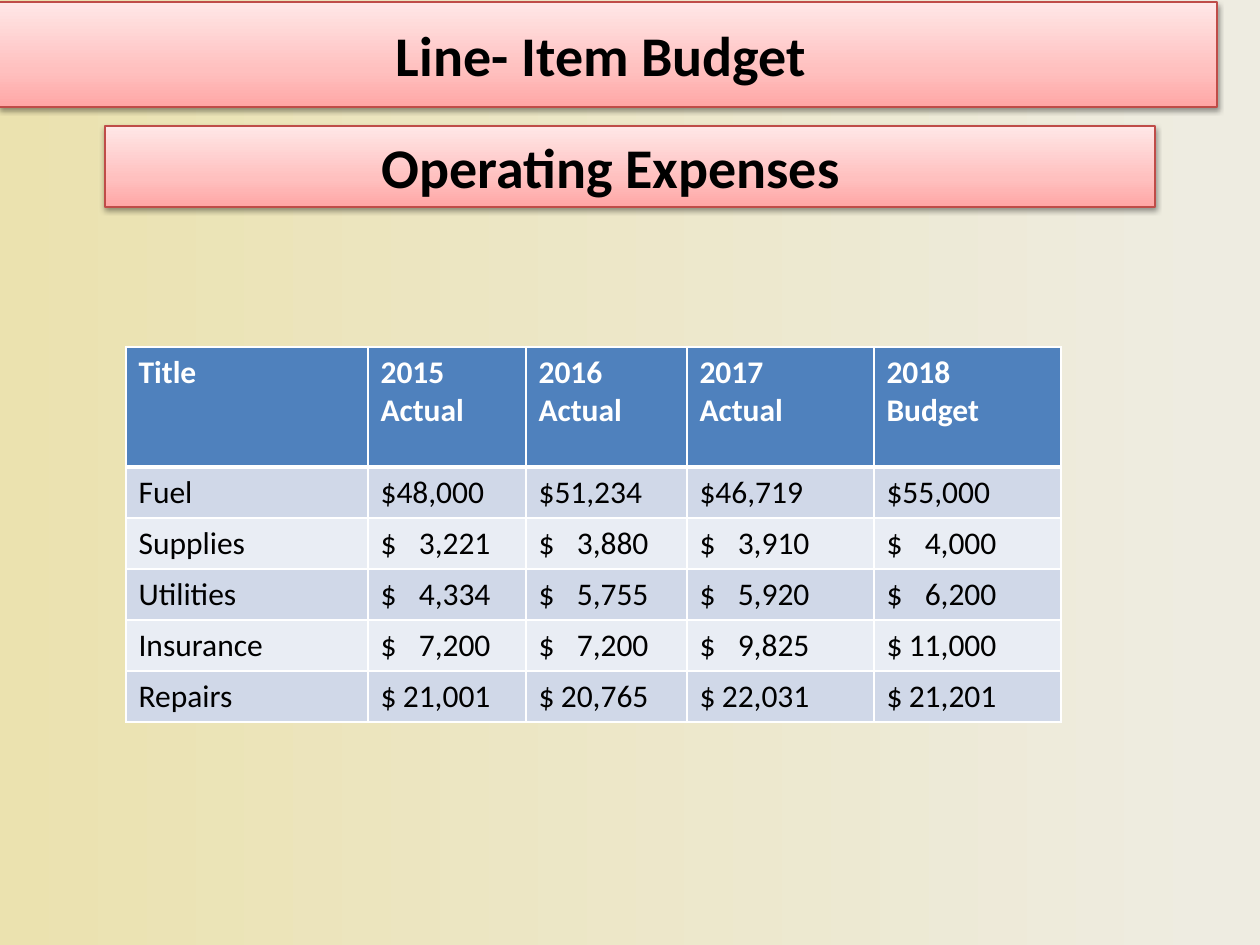
from lxml.etree import SubElement
from pptx import Presentation
from pptx.dml.color import RGBColor
from pptx.enum.shapes import MSO_SHAPE
from pptx.enum.text import MSO_ANCHOR, MSO_AUTO_SIZE, PP_ALIGN
from pptx.oxml.ns import qn
from pptx.util import Emu, Pt

EMU_PER_PX = 914400 / 126
BAR_STOPS = [(0, "FFA6A5"), (35, "FFC0BF"), (100, "FFE7E7")]
BACKGROUND_STOPS = [(0, "EBE2AF"), (97, "EEECE1")]
COLUMN_WIDTHS = [242, 158, 161, 187, 187]
HEADER_HEIGHT, ROW_HEIGHT = 120, 51
AMOUNT_TAB = 110
BUDGET = [
    ["Title", "2015 Actual", "2016 Actual", "2017\nActual", "2018 Budget"],
    ["Fuel", "$48,000", "$51,234", "$46,719", "$55,000"],
    ["Supplies", "$\t3,221", "$\t3,880", "$\t3,910", "$\t4,000"],
    ["Utilities", "$\t4,334", "$\t5,755", "$\t5,920", "$\t6,200"],
    ["Insurance", "$\t7,200", "$\t7,200", "$\t9,825", "$\t11,000"],
    ["Repairs", "$\t21,001", "$\t20,765", "$\t22,031", "$\t21,201"],
]


def px(length):
    return Emu(round(length * EMU_PER_PX))


def color(hex_code):
    return RGBColor.from_string(hex_code)


def set_font(paragraph, size, hex_code, bold):
    font = paragraph.font
    font.name = "Calibri"
    font.size = Pt(size)
    font.bold = bold
    font.color.rgb = color(hex_code)


def set_gradient(fill, owner, stops, angle):
    fill.gradient()
    fill.gradient_angle = angle
    stop_list = next(owner.iter(qn("a:gsLst")))
    for stop in list(stop_list):
        stop_list.remove(stop)
    for position, hex_code in stops:
        stop = SubElement(stop_list, qn("a:gs"), pos=str(position * 1000))
        SubElement(stop, qn("a:srgbClr"), val=hex_code)


def add_shadow(shape):
    shape.shadow.inherit = False
    effects = next(shape.element.iter(qn("a:effectLst")))
    shadow = SubElement(effects, qn("a:outerShdw"), blurRad="40000",
                        dist="20000", dir="5400000", rotWithShape="0")
    black = SubElement(shadow, qn("a:srgbClr"), val="000000")
    SubElement(black, qn("a:alpha"), val="38000")


def format_heading(bar, box, text, right_inset):
    bar.left, bar.top, bar.width, bar.height = map(px, box)
    set_gradient(bar.fill, bar.element, BAR_STOPS, 90)
    bar.line.color.rgb = color("BF4C48")
    bar.line.width = Pt(0.75)
    add_shadow(bar)
    frame = bar.text_frame
    frame.text = text
    frame.word_wrap = True
    frame.auto_size = MSO_AUTO_SIZE.SHAPE_TO_FIT_TEXT
    frame.vertical_anchor = MSO_ANCHOR.MIDDLE
    frame.margin_right = px(right_inset)
    heading = frame.paragraphs[0]
    heading.alignment = PP_ALIGN.CENTER
    set_font(heading, 32, "000000", True)


def set_borders(cell, top, bottom):
    properties = cell._tc.get_or_add_tcPr()
    for side, width in (("L", 1), ("R", 1), ("T", top), ("B", bottom)):
        border = SubElement(properties, qn(f"a:ln{side}"), w=str(Pt(width)))
        solid = SubElement(border, qn("a:solidFill"))
        SubElement(solid, qn("a:srgbClr"), val="FFFFFF")


def add_amount_tab(paragraph):
    tabs = SubElement(paragraph._p.get_or_add_pPr(), qn("a:tabLst"))
    SubElement(tabs, qn("a:tab"), pos=str(px(AMOUNT_TAB)), algn="r")


def fill_cell(cell, text, row):
    is_header = row == 0
    set_borders(cell, 3 if row == 1 else 1, 3 if is_header else 1)
    cell.fill.solid()
    band = "D0D8E8" if row % 2 else "E9EDF4"
    cell.fill.fore_color.rgb = color("4F81BD" if is_header else band)
    cell.text = text
    for paragraph in cell.text_frame.paragraphs:
        if "\t" in text:
            add_amount_tab(paragraph)
        set_font(paragraph, 18, "FFFFFF" if is_header else "000000", is_header)


def add_budget_table(slide, left, top):
    heights = [HEADER_HEIGHT] + [ROW_HEIGHT] * (len(BUDGET) - 1)
    table = slide.shapes.add_table(
        len(BUDGET), len(COLUMN_WIDTHS), px(left), px(top),
        px(sum(COLUMN_WIDTHS)), px(sum(heights))).table
    for column, width in zip(table.columns, COLUMN_WIDTHS):
        column.width = px(width)
    for row, height in zip(table.rows, heights):
        row.height = px(height)
    for row, entries in enumerate(BUDGET):
        for column, text in enumerate(entries):
            fill_cell(table.cell(row, column), text, row)


def main():
    deck = Presentation()
    deck.slide_width, deck.slide_height = px(1260), px(945)
    slide = deck.slides.add_slide(deck.slide_layouts[5])
    set_gradient(slide.background.fill, slide.element, BACKGROUND_STOPS, 0)
    format_heading(slide.shapes.title, (-1, 14, 1218, 81),
                   "Line- Item Budget", 26)
    expenses_box = (105, 126, 1050, 81)
    expenses = slide.shapes.add_shape(MSO_SHAPE.RECTANGLE,
                                      *map(px, expenses_box))
    format_heading(expenses, expenses_box, "Operating Expenses", 51)
    add_budget_table(slide, 126, 347)
    deck.save("out.pptx")


if __name__ == "__main__":
    main()
